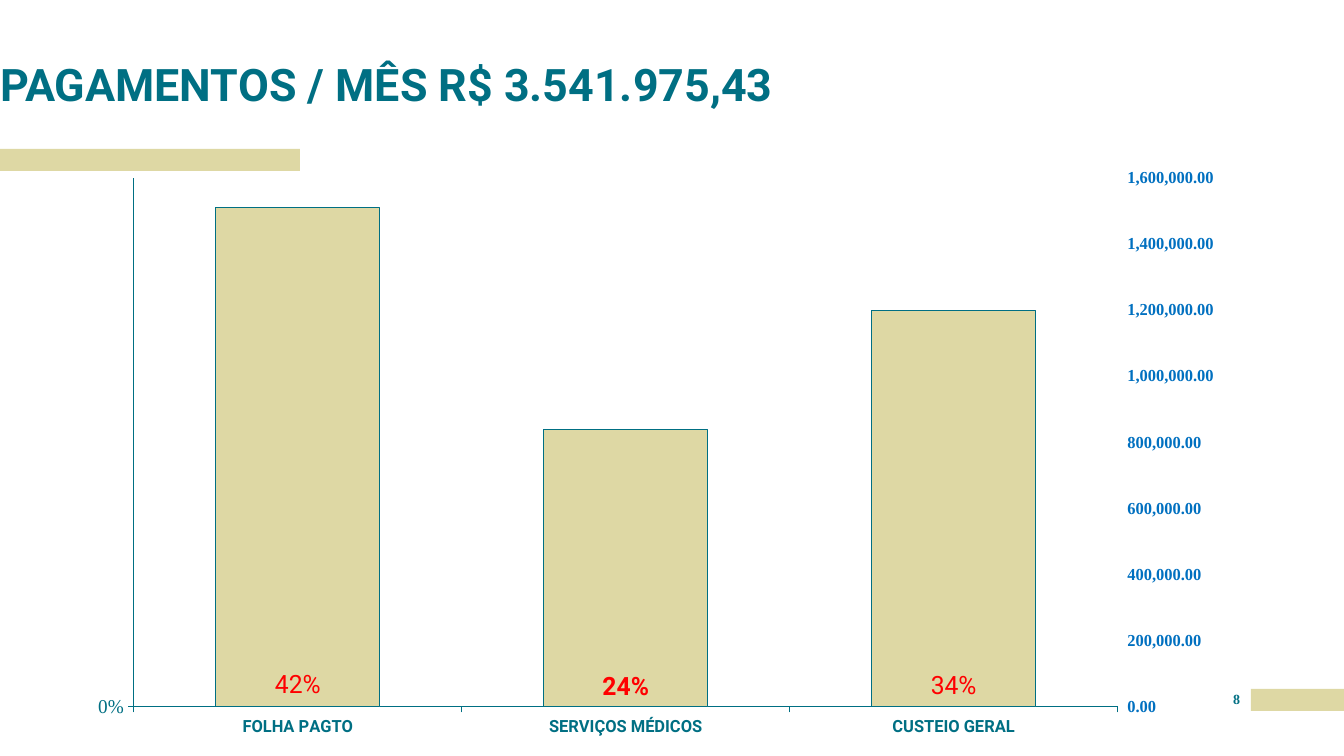
"""Build the monthly payments slide with its two-axis column chart."""
from copy import deepcopy

from lxml import etree
from pptx import Presentation
from pptx import util as u
from pptx.chart import axis as ax
from pptx.chart.data import CategoryChartData
from pptx.dml.color import RGBColor
from pptx.enum import chart as ch, shapes, text
from pptx.oxml.ns import qn

TITLE = "PAGAMENTOS / MÊS R$ 3.541.975,43"
PAGE = "8"
CATEGORIES = ["FOLHA PAGTO", "SERVIÇOS MÉDICOS", "CUSTEIO GERAL"]
SHARES = [0.43, 0.24, 0.34]
AMOUNTS = [1510000, 840000, 1200000]
SHARE_LABELS = {0: "42%", 2: "34%"}

SLIDE = (1344, 756)
BANDS = [(1251, 689, 93, 22), (0, 149, 300, 22)]
TITLE_BOX = (0, 45, 860, 66)
PAGE_BOX = (1222, 691, 29, 25)
CHART_BOX = (32, 160, 1182, 584)
PLOT = {"x": 0.088, "y": 0.031, "w": 0.849, "h": 0.905}

THEME = {
    "teal": "006F83", "sand": "DED8A4", "blue": "0070C0", "red": "FF0000",
    "grid": "A5E1E4", "sans": "Roboto", "serif": "Times New Roman",
    "title": 32, "label": 18, "left": 14, "axis": 12, "small": 10, "line": 0.75,
}


def px(n):
    return u.Inches(n / 100.8)


def rgb(name):
    return RGBColor.from_string(THEME[name])


def set_font(font, size, color="teal", face="sans", bold=False):
    font.size = u.Pt(THEME[size])
    font.name = THEME[face]
    font.bold = bold
    font.color.rgb = rgb(color)


def set_line(line, color="teal"):
    line.color.rgb = rgb(color)
    line.width = u.Pt(THEME["line"])


def add_text(s, words, box, anchor=text.MSO_ANCHOR.TOP, align=text.PP_ALIGN.LEFT,
             spacing=1.0, **font):
    tf = s.shapes.add_textbox(*map(px, box)).text_frame
    tf.word_wrap = True
    tf.margin_left = tf.margin_right = tf.margin_top = tf.margin_bottom = 0
    tf.vertical_anchor = anchor
    p = tf.paragraphs[0]
    p.alignment, p.line_spacing = align, spacing
    r = p.add_run()
    r.text = words
    set_font(r.font, **font)


def add_band(s, box):
    sp = s.shapes.add_shape(shapes.MSO_SHAPE.RECTANGLE, *map(px, box))
    sp.shadow.inherit = False
    sp.fill.solid()
    sp.fill.fore_color.rgb = rgb("sand")
    sp.line.fill.background()


def fix_plot_area(area):
    for old in area.findall(qn("c:layout")):
        area.remove(old)
    layout = etree.Element(qn("c:layout"))
    manual = etree.SubElement(layout, qn("c:manualLayout"))
    settings = {"layoutTarget": "inner", "xMode": "edge", "yMode": "edge", **PLOT}
    for tag, val in settings.items():
        etree.SubElement(manual, qn(f"c:{tag}")).set("val", str(val))
    area.insert(0, layout)


def split_axes(area):
    """Move the second series to its own plot and return both value axes."""
    bars, cat, val = (area.find(qn(f"c:{t}")) for t in ("barChart", "catAx", "valAx"))
    bars2, cat2, val2 = map(deepcopy, (bars, cat, val))
    bars.remove(bars.findall(qn("c:ser"))[1])
    bars2.remove(bars2.findall(qn("c:ser"))[0])
    ids = {cat.find(qn("c:axId")).get("val"): "5001",
           val.find(qn("c:axId")).get("val"): "5002"}
    for part in (bars2, cat2, val2):
        for el in part.iter(qn("c:axId"), qn("c:crossAx")):
            el.set("val", ids[el.get("val")])
    val2.find(qn("c:axPos")).set("val", "r")
    val2.find(qn("c:crosses")).set("val", "max")
    bars.addnext(bars2)
    val.addnext(val2)
    val2.addnext(cat2)
    ax.CategoryAxis(cat2).visible = False
    return ax.ValueAxis(val), ax.ValueAxis(val2)


def style_axis(axis, number_format=None, **font):
    axis.major_tick_mark = ch.XL_TICK_MARK.OUTSIDE
    axis.minor_tick_mark = ch.XL_TICK_MARK.NONE
    axis.tick_label_position = ch.XL_TICK_LABEL_POSITION.NEXT_TO_AXIS
    set_font(axis.tick_labels.font, **font)
    set_line(axis.format.line)
    if number_format:
        axis.tick_labels.number_format = number_format
        axis.tick_labels.number_format_is_linked = False


def add_payments_chart(s):
    data = CategoryChartData()
    data.categories = CATEGORIES
    data.add_series("Series 1", SHARES, "0%")
    data.add_series("Series 2", AMOUNTS, "#,##0.00")
    chart = s.shapes.add_chart(ch.XL_CHART_TYPE.COLUMN_CLUSTERED,
                               *map(px, CHART_BOX), data).chart
    chart.has_legend = chart.has_title = False
    set_font(chart.font, "small", face="serif")
    area = chart.plots[0]._element.getparent()
    left, right = split_axes(area)
    fix_plot_area(area)

    style_axis(chart.category_axis, size="axis", bold=True)
    style_axis(left, "0%", size="left", face="serif")
    style_axis(right, "#,##0.00", size="axis", color="blue", face="serif", bold=True)
    left.minimum_scale, left.maximum_scale, left.major_unit = 0, 100, 10000
    left.has_major_gridlines = True
    set_line(left.major_gridlines.format.line, "grid")
    right.minimum_scale, right.maximum_scale, right.major_unit = 0, 1600000, 200000
    right.has_major_gridlines = False
    right.format.line.fill.background()

    for plot, color in zip(chart.plots, ("teal", "sand")):
        plot.gap_width = plot.overlap = 100
        plot.vary_by_categories = False
        fill = plot.series[0].format.fill
        fill.solid()
        fill.fore_color.rgb = rgb(color)
    shares, amounts = (plot.series[0] for plot in chart.plots)
    set_line(amounts.format.line)

    labels = shares.data_labels
    labels.show_value = True
    labels.number_format, labels.number_format_is_linked = "0%", False
    labels.position = ch.XL_LABEL_POSITION.OUTSIDE_END
    set_font(labels.font, "label", "red", bold=True)
    for i, words in SHARE_LABELS.items():
        label = shares.points[i].data_label
        r = label.text_frame.paragraphs[0].add_run()
        r.text = words
        set_font(r.font, "label", "red")
        label.position = ch.XL_LABEL_POSITION.OUTSIDE_END


def main():
    prs = Presentation()
    prs.slide_width, prs.slide_height = map(px, SLIDE)
    s = prs.slides.add_slide(prs.slide_layouts[6])
    for box in BANDS:
        add_band(s, box)
    add_text(s, TITLE, TITLE_BOX, anchor=text.MSO_ANCHOR.BOTTOM, spacing=0.9,
             size="title", bold=True)
    add_payments_chart(s)
    add_text(s, PAGE, PAGE_BOX, align=text.PP_ALIGN.CENTER,
             size="small", face="serif", bold=True)
    prs.save("out.pptx")


if __name__ == "__main__":
    main()
